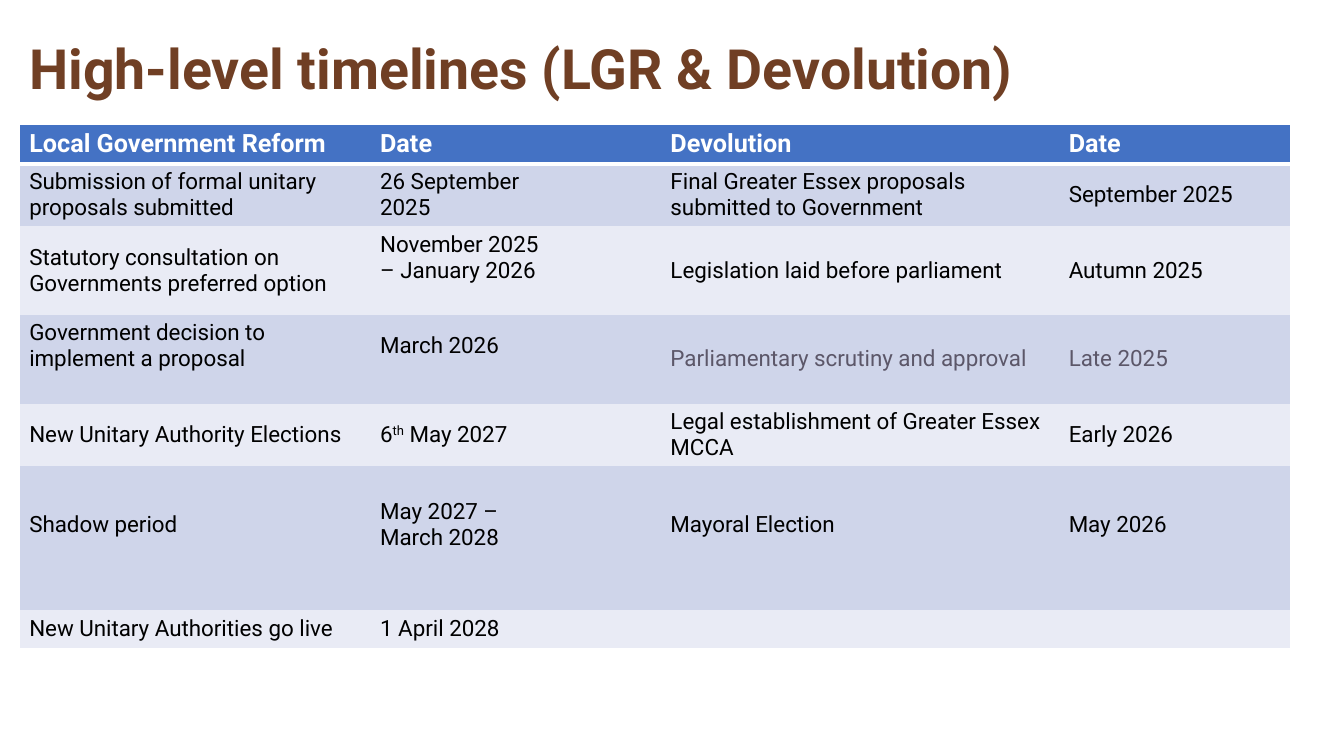
from lxml import etree
from pptx import Presentation
from pptx import util as u
from pptx.dml import color
from pptx.enum import text
from pptx.oxml import ns

COLUMN_WIDTHS = [3.48, 1.93, 0.95, 3.95, 2.3]
ROW_HEIGHTS = [0.37, 0.62, 0.88, 0.88, 0.62, 1.43, 0.38]
TIMELINE = [
    ["Local Government Reform", "Date", "", "Devolution", "Date"],
    ["Submission of formal unitary proposals submitted", "26 September 2025", "",
     "Final Greater Essex proposals submitted to Government", "September 2025"],
    ["Statutory consultation on Governments preferred option",
     "November 2025 – January 2026", "",
     "Legislation laid before parliament", "Autumn 2025"],
    ["Government decision to implement a proposal", "March 2026", "",
     "Parliamentary scrutiny and approval", "Late 2025"],
    ["New Unitary Authority Elections", "6th May 2027", "",
     "Legal establishment of Greater Essex MCCA", "Early 2026"],
    ["Shadow period", "May 2027 – March 2028", "", "Mayoral Election", "May 2026"],
    ["New Unitary Authorities go live", "1 April 2028", "", "", ""],
]
MUTED_CELLS = [(3, 3), (3, 4)]
RAISED_CELLS = [(2, 1), (3, 0), (3, 1), (5, 0), (5, 1), (5, 3), (5, 4)]


def rgb(value):
    return color.RGBColor.from_string(value)


class TimelineSlide:
    font_name = "Roboto"
    title_color = "703F24"
    header_fill = "4472C4"
    band_fills = ["E9EBF5", "CFD5EA"]
    text_color = "000000"
    muted_color = "5C5769"
    line_color = "FFFFFF"

    def __init__(self, presentation):
        self.slide = presentation.slides.add_slide(presentation.slide_layouts[5])

    def format_runs(self, paragraph, size, hex_color, bold=False):
        for run in paragraph.runs:
            run.font.name = self.font_name
            run.font.size = u.Pt(size)
            run.font.bold = bold
            run.font.color.rgb = rgb(hex_color)

    def add_title(self, wording, left, top, width, height):
        title = self.slide.shapes.title
        title.left, title.top = u.Inches(left), u.Inches(top)
        title.width, title.height = u.Inches(width), u.Inches(height)
        frame = title.text_frame
        frame.text = wording
        frame.word_wrap = True
        frame.auto_size = text.MSO_AUTO_SIZE.NONE
        frame.vertical_anchor = text.MSO_ANCHOR.MIDDLE
        paragraph = frame.paragraphs[0]
        paragraph.alignment = text.PP_ALIGN.LEFT
        paragraph.line_spacing = 0.9
        self.format_runs(paragraph, 39.6, self.title_color, bold=True)

    def add_table(self, rows, widths, heights, left, top):
        table = self.slide.shapes.add_table(
            len(rows), len(widths), u.Inches(left), u.Inches(top),
            u.Inches(sum(widths)), u.Inches(sum(heights))).table
        for column, width in zip(table.columns, widths):
            column.width = u.Inches(width)
        for row, height in zip(table.rows, heights):
            row.height = u.Inches(height)
        for row_index, row in enumerate(rows):
            for column_index, wording in enumerate(row):
                cell = table.cell(row_index, column_index)
                self.set_borders(cell, {
                    "lnL": 1 if column_index == 0 else 0,
                    "lnR": 1 if column_index == len(widths) - 1 else 0,
                    "lnT": {0: 1, 1: 3}.get(row_index, 0),
                    "lnB": {0: 3, len(rows) - 1: 1}.get(row_index, 0),
                })
                self.fill_cell(cell, wording, row_index)
        return table

    def fill_cell(self, cell, wording, row_index):
        header = row_index == 0
        cell.fill.solid()
        cell.fill.fore_color.rgb = rgb(
            self.header_fill if header else self.band_fills[row_index % 2])
        cell.vertical_anchor = text.MSO_ANCHOR.MIDDLE
        cell.margin_top = cell.margin_bottom = u.Inches(0.05 if wording else 0)
        cell.text_frame.text = wording
        self.format_runs(cell.text_frame.paragraphs[0], 18 if header else 16,
                         self.line_color if header else self.text_color, header)

    def set_borders(self, cell, line_widths):
        properties = cell._tc.get_or_add_tcPr()
        for tag, width in line_widths.items():
            line = etree.SubElement(properties, ns.qn("a:" + tag), w=str(u.Pt(width)))
            if width:
                fill = etree.SubElement(line, ns.qn("a:solidFill"))
                etree.SubElement(fill, ns.qn("a:srgbClr"), val=self.line_color)
            else:
                etree.SubElement(line, ns.qn("a:noFill"))

    def mute_cell(self, cell):
        self.format_runs(cell.text_frame.paragraphs[0], 16, self.muted_color)

    def raise_cell(self, cell):
        cell.margin_bottom = u.Inches(0.31)

    def set_ordinal(self, cell, number, suffix, rest):
        paragraph = cell.text_frame.paragraphs[0]
        paragraph.text = number
        for wording in (suffix, rest):
            paragraph.add_run().text = wording
        self.format_runs(paragraph, 16, self.text_color)
        paragraph.runs[1]._r.get_or_add_rPr().set("baseline", "30000")


def main():
    presentation = Presentation()
    presentation.slide_width = u.Inches(13.33)
    presentation.slide_height = u.Inches(7.5)
    timeline = TimelineSlide(presentation)
    timeline.add_title("High-level timelines (LGR & Devolution)", 0.19, 0.39, 12.86, 0.63)
    table = timeline.add_table(TIMELINE, COLUMN_WIDTHS, ROW_HEIGHTS, 0.19, 1.23)
    for position in MUTED_CELLS:
        timeline.mute_cell(table.cell(*position))
    for position in RAISED_CELLS:
        timeline.raise_cell(table.cell(*position))
    timeline.set_ordinal(table.cell(4, 1), "6", "th", " May 2027")
    presentation.save("out.pptx")


if __name__ == "__main__":
    main()
